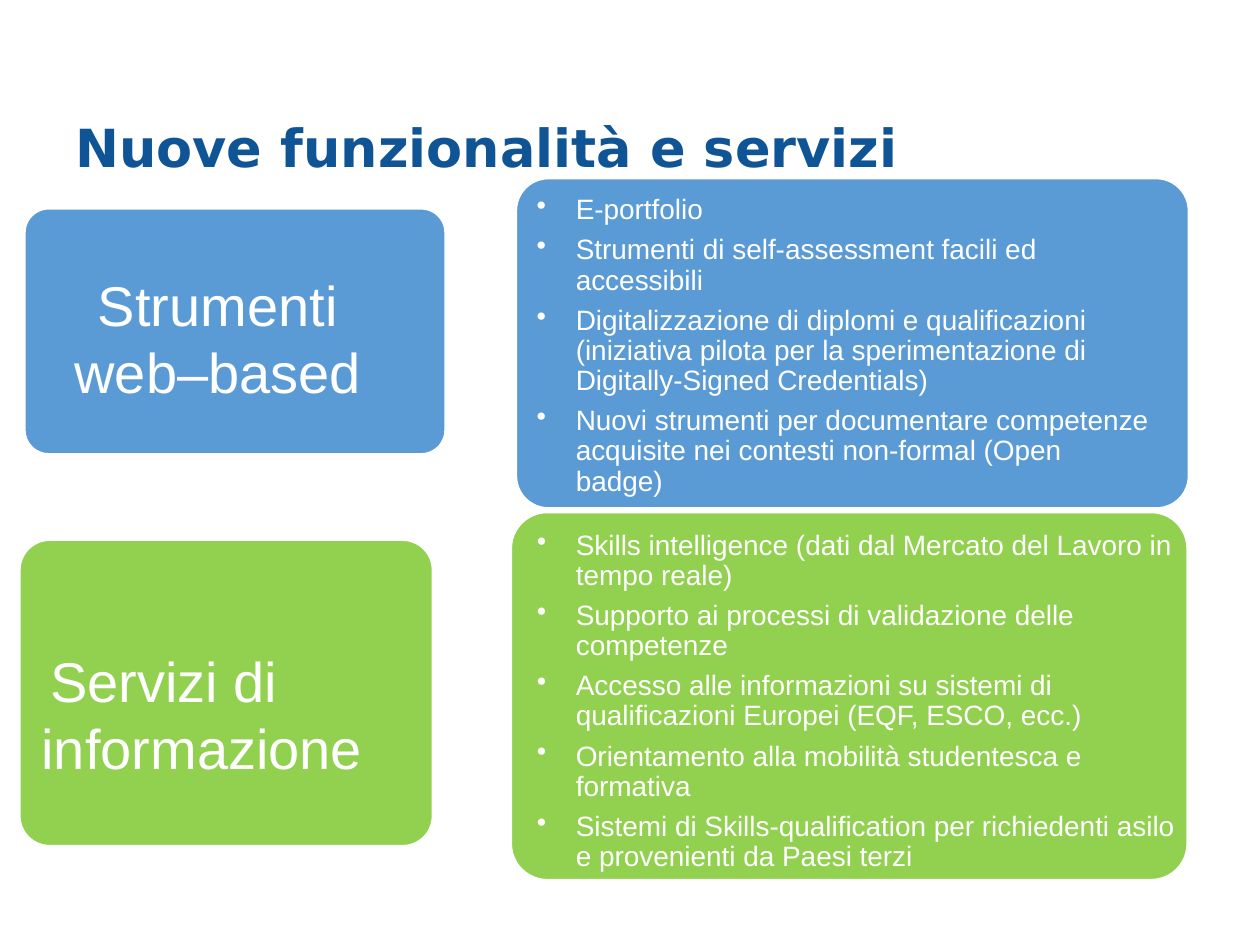
from lxml import etree
from pptx import Presentation
from pptx.dml.color import RGBColor
from pptx.enum.shapes import MSO_SHAPE
from pptx.enum.text import MSO_ANCHOR, PP_ALIGN
from pptx.oxml.ns import qn
from pptx.util import Inches, Pt

ROUNDED = MSO_SHAPE.ROUNDED_RECTANGLE
MIDDLE = MSO_ANCHOR.MIDDLE
LEFT = PP_ALIGN.LEFT
CENTER = PP_ALIGN.CENTER

WHITE = RGBColor(0xFF, 0xFF, 0xFF)
NAVY = RGBColor(0x0F, 0x54, 0x94)
BLUE = RGBColor(0x5B, 0x9B, 0xD5)
GREEN = RGBColor(0x92, 0xD0, 0x50)

WEB_TOOLS = [
    "E-portfolio",
    "Strumenti di self-assessment facili ed accessibili",
    "Digitalizzazione di diplomi e qualificazioni (iniziativa pilota per la "
    "sperimentazione di Digitally-Signed Credentials)",
    "Nuovi strumenti per documentare competenze acquisite nei contesti "
    "non-formal (Open badge)",
]
INFORMATION_SERVICES = [
    "Skills intelligence (dati dal Mercato del Lavoro in tempo reale)",
    "Supporto ai processi di validazione delle competenze",
    "Accesso alle informazioni su sistemi di qualificazioni Europei (EQF, ESCO, ecc.)",
    "Orientamento alla mobilità studentesca e formativa",
    "Sistemi di Skills-qualification per richiedenti asilo e provenienti da Paesi terzi",
]


def write_text(paragraph, text, *, size, font="Arial", color=WHITE, bold=False,
               align=LEFT, margin=0, indent=0, bullet=None, line_spacing=1.0,
               space_after=0):
    paragraph.text = text
    paragraph.alignment = align
    paragraph.line_spacing = line_spacing
    paragraph.space_after = Pt(space_after)
    properties = paragraph._p.get_or_add_pPr()
    properties.set("marL", str(Inches(margin)))
    properties.set("indent", str(Inches(indent)))
    if bullet:
        etree.SubElement(properties, qn("a:buChar")).set("char", bullet)
    run_font = paragraph.runs[0].font
    run_font.name = font
    run_font.size = Pt(size)
    run_font.bold = bold
    run_font.color.rgb = color


class SlideBuilder:
    label_size = 32
    list_size = 16

    def __init__(self, slide):
        self.slide = slide

    def panel(self, left, top, width, height, color):
        shape = self.slide.shapes.add_shape(
            ROUNDED, Inches(left), Inches(top), Inches(width), Inches(height))
        shape.adjustments[0] = 0.1
        shape.shadow.inherit = False
        shape.fill.solid()
        shape.fill.fore_color.rgb = color
        shape.line.color.rgb = WHITE
        shape.line.width = Pt(2)

    def text_box(self, left, top, width, height, texts, inset=0, **text_format):
        box = self.slide.shapes.add_textbox(
            Inches(left), Inches(top), Inches(width), Inches(height))
        frame = box.text_frame
        frame.word_wrap = True
        frame.vertical_anchor = MIDDLE
        frame.margin_left = frame.margin_right = Inches(inset)
        frame.margin_top = frame.margin_bottom = Inches(inset)
        for index, text in enumerate(texts):
            paragraph = frame.add_paragraph() if index else frame.paragraphs[0]
            write_text(paragraph, text, **text_format)

    def title(self, left, top, width, height, text):
        self.text_box(left, top, width, height, [text], size=30,
                      font="DejaVu Sans", color=NAVY, bold=True)

    def label(self, left, top, width, height, text, **text_format):
        self.text_box(left, top, width, height, [text],
                      size=self.label_size, **text_format)

    def bullet_list(self, left, top, width, height, items):
        self.text_box(left, top, width, height, items, inset=0.17,
                      size=self.list_size, margin=0.31, indent=-0.31,
                      bullet="•", line_spacing=0.9, space_after=5.6)


def main():
    presentation = Presentation()
    presentation.slide_width = Inches(10)
    presentation.slide_height = Inches(7.5)
    builder = SlideBuilder(
        presentation.slides.add_slide(presentation.slide_layouts[6]))

    builder.title(0.6, 0.65, 7.7, 1.02, "Nuove funzionalità e servizi")

    builder.panel(0.19, 1.65, 3.35, 1.96, BLUE)
    builder.label(0.23, 1.8, 3, 1.76, "Strumenti web–based", align=CENTER)
    builder.panel(0.15, 4.28, 3.29, 2.44, GREEN)
    builder.label(0.33, 4.69, 2.9, 1.95, "Servizi di informazione", indent=0.07)

    builder.panel(4.09, 1.41, 5.35, 2.63, BLUE)
    builder.bullet_list(4.09, 1.38, 5.2, 2.74, WEB_TOOLS)
    builder.panel(4.05, 4.06, 5.38, 2.93, GREEN)
    builder.bullet_list(4.09, 4.06, 5.51, 3.02, INFORMATION_SERVICES)

    presentation.save("out.pptx")


if __name__ == "__main__":
    main()
